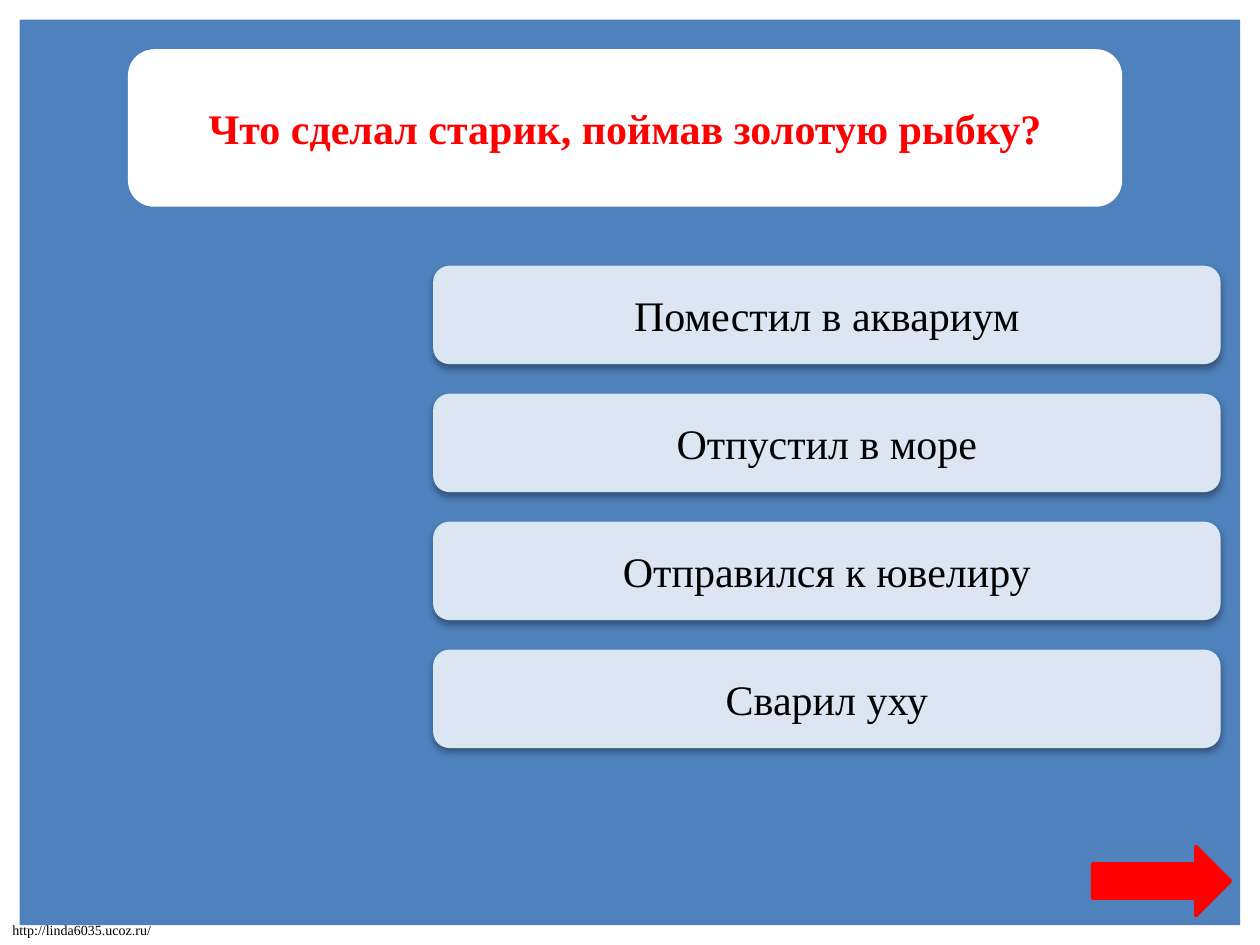
from lxml.etree import SubElement
from pptx import Presentation
from pptx.dml.color import RGBColor
from pptx.enum.shapes import MSO_SHAPE
from pptx.enum.text import MSO_ANCHOR, MSO_AUTO_SIZE, PP_ALIGN
from pptx.oxml.ns import qn
from pptx.util import Inches, Pt

# The slide is a grid of square cells; every box is
# (column, row, columns wide, rows high)
WIDE, HIGH = 10, 7.5
COLS, ROWS = 64, 48
CELL = WIDE / COLS

BLUE = RGBColor(0x4F, 0x81, 0xBD)
PALE = RGBColor(0xDC, 0xE6, 0xF2)
WHITE = RGBColor(0xFF, 0xFF, 0xFF)
BLACK = RGBColor(0, 0, 0)
RED = RGBColor(0xFF, 0, 0)
FONT = "Times New Roman"

QUESTION = "Что сделал старик, поймав золотую рыбку?"
ANSWERS = ["Поместил в аквариум", "Отпустил в море",
           "Отправился к ювелиру", "Сварил уху"]
ADDRESS = "http://linda6035.ucoz.ru/"


def to_slide(box):
    return [Inches(cells * CELL) for cells in box]


def add_form(slide, kind, box, fill):
    form = slide.shapes.add_shape(kind, *to_slide(box))
    form.shadow.inherit = False
    form.fill.solid()
    form.fill.fore_color.rgb = fill
    form.line.fill.background()
    return form


def write(frame, text, size, color, bold=False):
    frame.text = text
    font = frame.paragraphs[0].runs[0].font
    font.name = FONT
    font.size = Pt(size)
    font.bold = bold
    font.color.rgb = color


def add_card(slide, box, text, fill, color, bold=False):
    card = add_form(slide, MSO_SHAPE.ROUNDED_RECTANGLE, box, fill)
    frame = card.text_frame
    write(frame, text, 24, color, bold)
    frame.word_wrap = True
    frame.vertical_anchor = MSO_ANCHOR.MIDDLE
    frame.paragraphs[0].alignment = PP_ALIGN.CENTER
    return card


def drop_shadow(form):
    # Soft shadow straight below the shape
    effects = form._element.spPr.find(qn("a:effectLst"))
    outer = SubElement(effects, qn("a:outerShdw"), blurRad=str(Pt(3.5)),
                       dist=str(Pt(2.2)), dir="5400000", rotWithShape="0")
    tint = SubElement(outer, qn("a:srgbClr"), val="000000")
    SubElement(tint, qn("a:alpha"), val="32000")


def add_answers(slide, box, texts, gap=1.5):
    # Cards of equal height share the box, with equal gaps between them
    left, top, width, height = box
    pitch = (height + gap) / len(texts)
    for row, text in enumerate(texts):
        spot = (left, top + row * pitch, width, pitch - gap)
        drop_shadow(add_card(slide, spot, text, PALE, BLACK))


def add_footer(slide, box, text):
    frame = slide.shapes.add_textbox(*to_slide(box)).text_frame
    write(frame, text, 8, BLACK)
    frame.word_wrap = False
    frame.auto_size = MSO_AUTO_SIZE.SHAPE_TO_FIT_TEXT


def add_arrow(slide, box):
    arrow = add_form(slide, MSO_SHAPE.RIGHT_ARROW, box, RED)
    arrow.line.color.rgb = RED
    arrow.line.width = Pt(2)


def add_quiz(slide):
    # Backdrop, one cell in from every edge, and the web address below it
    add_form(slide, MSO_SHAPE.RECTANGLE, (1, 1, COLS - 2, ROWS - 2), BLUE)
    add_footer(slide, (0, ROWS - 1.5, 8.4, 1.5), ADDRESS)
    # Question, answers and the arrow onward
    add_card(slide, (6.5, 2.5, 50.5, 8), QUESTION, WHITE, RED, bold=True)
    add_answers(slide, (22, 13.5, 40, 24.5), ANSWERS)
    add_arrow(slide, (55.5, 43, 7, 3.5))


def main():
    deck = Presentation()
    deck.slide_width, deck.slide_height = Inches(WIDE), Inches(HIGH)
    add_quiz(deck.slides.add_slide(deck.slide_layouts[6]))
    deck.save("out.pptx")


if __name__ == "__main__":
    main()
